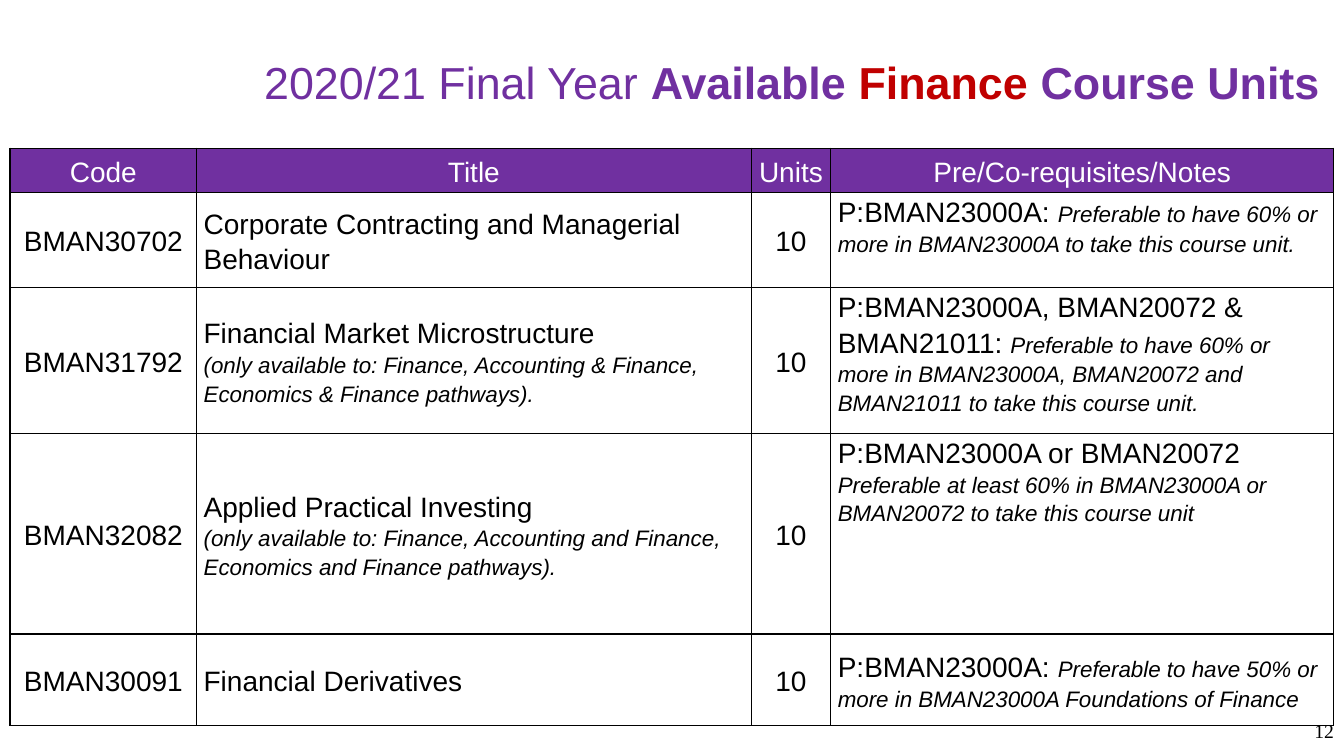
from lxml.etree import SubElement as Sub
from pptx import Presentation
from pptx.dml.color import RGBColor as Rgb
from pptx.enum.text import MSO_ANCHOR as Anchor, MSO_AUTO_SIZE as Auto, PP_ALIGN as Align
from pptx.oxml.ns import qn
from pptx.util import Inches, Pt

HUES = {"purple": "7030A0", "red": "C00000", "white": "FFFFFF", "black": "000000"}
HEAD = {"size": Pt(32), "name": "Arial", "bold": False}
BOLD = HEAD | {"bold": True}
MAIN = {"size": Pt(20), "name": "Arial", "bold": False, "italic": False}
NOTE = MAIN | {"size": Pt(16), "italic": True}
PAGE = {"size": Pt(14), "name": "Times New Roman"}

COLS = [1.85, 5.5, 0.79, 4.99]
ROWS = [0.44, 0.94, 1.45, 1.99, 0.91]
LABELS = ["Code", "Title", "Units", "Pre/Co-requisites/Notes"]

# Code, title paragraphs, note paragraphs, anchor of the notes
UNITS = [
    ("BMAN30702",
     [[("Corporate Contracting and Managerial Behaviour", MAIN)]],
     [[("P:BMAN23000A: ", MAIN),
       ("Preferable to have 60% or more in BMAN23000A to take this course unit.", NOTE)]],
     Anchor.TOP),
    ("BMAN31792",
     [[("Financial Market Microstructure", MAIN)],
      [("(only available to: Finance, Accounting & Finance, "
        "Economics & Finance pathways).", NOTE)]],
     [[("P:BMAN23000A, BMAN20072 & BMAN21011: ", MAIN),
       ("Preferable to have 60% or more in BMAN23000A, BMAN20072 and BMAN21011 "
        "to take this course unit.", NOTE)]],
     Anchor.TOP),
    ("BMAN32082",
     [[("Applied Practical Investing", MAIN)],
      [("(only available to: Finance, Accounting and Finance, "
        "Economics and Finance pathways).", NOTE)]],
     [[("P:BMAN23000A or BMAN20072", MAIN)],
      [("Preferable at least 60% in BMAN23000A or BMAN20072 "
        "to take this course unit", NOTE)]],
     Anchor.TOP),
    ("BMAN30091",
     [[("Financial Derivatives", MAIN)]],
     [[("P:BMAN23000A: ", MAIN),
       ("Preferable to have 50% or more in BMAN23000A Foundations of Finance", NOTE)]],
     Anchor.MIDDLE),
]


def add_run(para, text, style, hue):
    run = para.add_run()
    run.text = text
    for key, value in style.items():
        setattr(run.font, key, value)
    run.font.color.rgb = Rgb.from_string(HUES[hue])


def place(shape, box):
    """Set the shape's box and its plain, middle-anchored frame."""
    shape.left, shape.top, shape.width, shape.height = (Inches(n) for n in box)
    frame = shape.text_frame
    frame.word_wrap = True
    frame.auto_size = Auto.NONE
    frame.vertical_anchor = Anchor.MIDDLE
    return frame.paragraphs[0]


def add_title(slide, box):
    para = place(slide.shapes.title, box)
    para.alignment = Align.CENTER
    add_run(para, "2020/21 Final Year ", HEAD, "purple")
    add_run(para, "Available ", BOLD, "purple")
    add_run(para, "Finance", BOLD, "red")
    add_run(para, " Course Units", BOLD, "purple")


def add_page(slide, box):
    para = place(slide.shapes.add_textbox(0, 0, 0, 0), box)
    para.alignment = Align.RIGHT
    add_run(para, "12", PAGE, "black")


def set_edges(cell):
    props = cell._tc.get_or_add_tcPr()
    for side in ("lnL", "lnR", "lnT", "lnB"):
        line = Sub(props, qn("a:" + side), w=str(Pt(1)))
        fill = Sub(line, qn("a:solidFill"))
        Sub(fill, qn("a:srgbClr"), val=HUES["black"])


def fill_cell(cell, paras, align, anchor=Anchor.MIDDLE, hue="black", back=None):
    cell.margin_left = cell.margin_right = Inches(0.07)
    cell.margin_top = cell.margin_bottom = 0
    cell.vertical_anchor = anchor
    set_edges(cell)
    if back:
        cell.fill.solid()
        cell.fill.fore_color.rgb = Rgb.from_string(HUES[back])
    else:
        cell.fill.background()
    frame = cell.text_frame
    for i, runs in enumerate(paras):
        para = frame.add_paragraph() if i else frame.paragraphs[0]
        para.alignment = align
        para.line_spacing = 1.15
        for text, style in runs:
            add_run(para, text, style, hue)


def add_units(slide, box):
    shape = slide.shapes.add_table(len(ROWS), len(COLS), *(Inches(n) for n in box))
    table = shape.table
    for col, width in zip(table.columns, COLS):
        col.width = Inches(width)
    for row, height in zip(table.rows, ROWS):
        row.height = Inches(height)
    # Header row
    for i, label in enumerate(LABELS):
        fill_cell(table.cell(0, i), [[(label, MAIN)]], Align.CENTER,
                  hue="white", back="purple")
    # One row for each course unit
    for i, (code, title, notes, anchor) in enumerate(UNITS, 1):
        fill_cell(table.cell(i, 0), [[(code, MAIN)]], Align.CENTER)
        fill_cell(table.cell(i, 1), title, Align.LEFT)
        fill_cell(table.cell(i, 2), [[("10", MAIN)]], Align.CENTER)
        fill_cell(table.cell(i, 3), notes, Align.LEFT, anchor)


def main():
    deck = Presentation()
    deck.slide_width, deck.slide_height = Inches(13.33), Inches(7.5)
    slide = deck.slides.add_slide(deck.slide_layouts[5])
    add_page(slide, (11.25, 7, 2.08, 0.5))
    add_title(slide, (2.34, 0.3, 11.03, 1.01))
    add_units(slide, (0.1, 1.47, sum(COLS), sum(ROWS)))
    deck.save("out.pptx")


if __name__ == "__main__":
    main()
